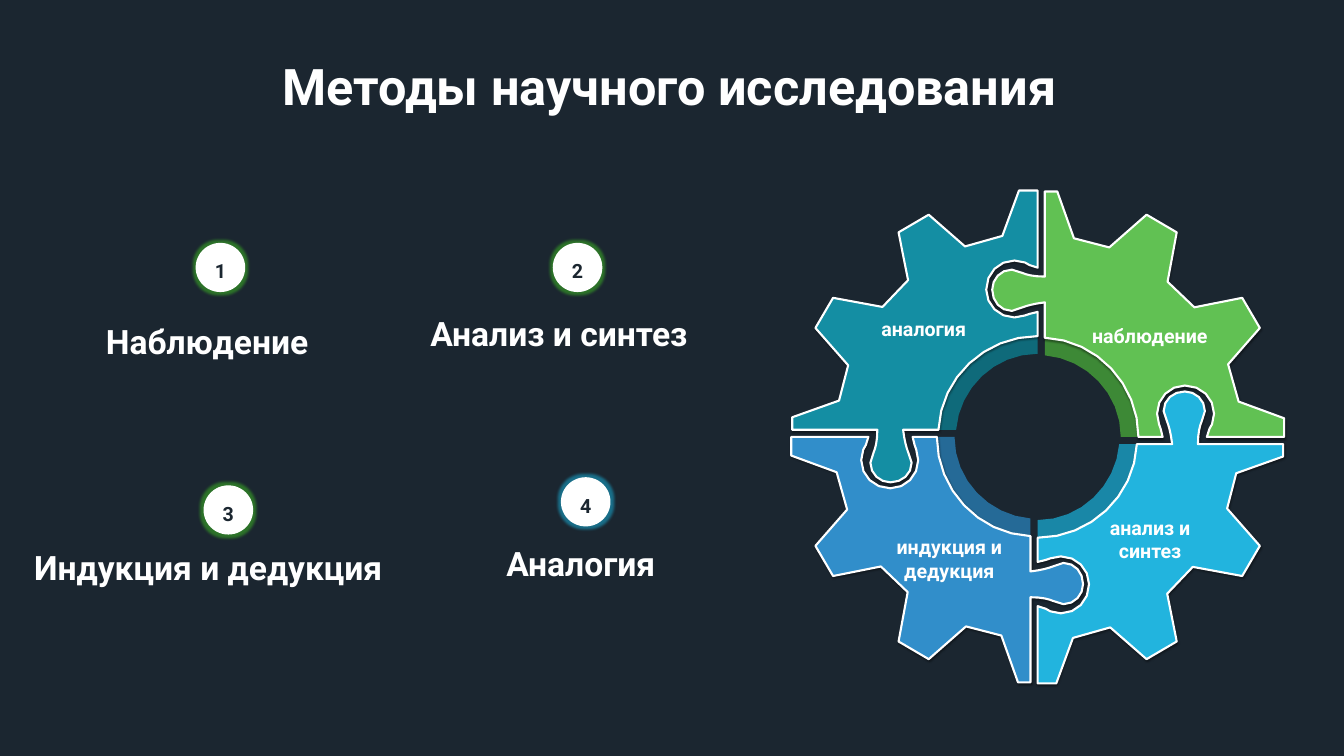
import math

import pptx
import pptx.dml.color
import pptx.enum.shapes
import pptx.enum.text
import pptx.oxml
import pptx.oxml.ns
import pptx.util

Cm, Pt = pptx.util.Cm, pptx.util.Pt
PP = pptx.enum.text.PP_ALIGN
ANCHOR = pptx.enum.text.MSO_ANCHOR
qn = pptx.oxml.ns.qn
NS = pptx.oxml.ns.nsdecls("a")
DARK, WHITE = "1B2630", "FFFFFF"


def paint(fill, tone):
    fill.solid()
    fill.fore_color.rgb = pptx.dml.color.RGBColor.from_string(tone)


def write(shape, text, size, align=PP.CENTER, tone=WHITE, space=None):
    frame = shape.text_frame
    frame.word_wrap = True
    para = frame.paragraphs[0]
    para.text = text
    para.alignment = align
    para.line_spacing = space
    para.font.name = "Roboto"
    para.font.size = Pt(size)
    para.font.bold = True
    paint(para.font.fill, tone)


deck = pptx.Presentation()
deck.slide_width, deck.slide_height = Cm(67.74), Cm(38.1)
slide = deck.slides.add_slide(deck.slide_layouts[5])
shapes = slide.shapes
paint(slide.background.fill, DARK)

title = shapes.title
title.left, title.top, title.width, title.height = Cm(4.32), Cm(2.64), Cm(59.51), Cm(3.07)
title.text_frame.vertical_anchor = ANCHOR.TOP
write(title, "Методы научного исследования ", 72)

# Numbered methods: circle place, glow, caption box
methods = [
    (9.86, 12.24, "338D27", "Наблюдение", 4.47, 15.44, 11.94, PP.CENTER, 1.3),
    (27.86, 12.24, "338D27", "Анализ и синтез", 21.44, 15.65, 14.99, PP.LEFT, None),
    (10.26, 24.46, "338D27", "Индукция и дедукция", 1.47, 27.46, 19.99, PP.LEFT, None),
    (28.27, 24.05, "1987A7", "Аналогия", 25.27, 27.25, 8.99, PP.LEFT, None),
]
for num, (x, y, glow, name, left, top, width, align, space) in enumerate(methods, 1):
    disc = shapes.add_shape(
        pptx.enum.shapes.MSO_SHAPE.OVAL, Cm(x), Cm(y), Cm(2.5), Cm(2.48))
    paint(disc.fill, WHITE)
    disc.line.fill.background()
    disc.shadow.inherit = False
    disc._element.spPr.find(qn("a:effectLst")).append(pptx.oxml.parse_xml(
        f'<a:glow {NS} rad="{Pt(8)}"><a:srgbClr val="{glow}">'
        '<a:alpha val="75000"/></a:srgbClr></a:glow>'))
    disc.text_frame.vertical_anchor = ANCHOR.MIDDLE
    write(disc, str(num), 28, tone=DARK, space=1.3)
    box = shapes.add_textbox(Cm(left), Cm(top), Cm(width), Cm(2.31))
    write(box, name, 48, align, space=space)

# One quarter of the gear, in cm from its centre: pairs are
# straight steps, sixes are Bezier curves
ring = [
    (4.19, 0), (5.18, 0), (5.18, -2.77, 3.07, -5, 0.36, -5.18),
    (0.36, -4.11), (2.46, -3.94, 4.19, -2.18, 4.19, 0),
]
piece = [
    (0.36, -5), (3, -4.88, 5.08, -2.64, 5.08, 0),
    # socket
    (6.3, 0), (6.2, -0.41), (6.12, -0.64), (6.02, -1.17),
    (6.02, -1.96, 6.65, -2.59, 7.42, -2.59),
    (8.26, -2.59, 8.89, -1.96, 8.89, -1.17),
    (8.79, -0.64), (8.66, -0.41), (8.53, 0),
    # teeth
    (12.42, 0), (12.42, -0.94), (10.13, -1.78), (9.6, -3.66),
    (11.2, -5.49), (10.31, -7.01), (7.9, -6.53), (6.55, -7.82),
    (7.01, -10.31), (5.49, -11.2), (3.61, -9.55), (1.83, -10.01),
    (0.99, -12.37), (0.36, -12.37),
    # knob
    (0.36, -8.08), (-0.23, -8.08, -0.58, -8.18, -0.76, -8.26), (-1.3, -8.43),
    (-1.88, -8.43, -2.29, -7.95, -2.29, -7.42),
    (-2.29, -6.83, -1.88, -6.35, -1.3, -6.35),
    (-0.76, -6.53), (-0.58, -6.6, -0.23, -6.71, 0.36, -6.78),
]
quarters = [(3, "0F6A7A", "148EA3"), (0, "439837", "61C153"),
            (1, "1987A7", "22B4DE"), (2, "256A97", "318ECA")]
for turns, shade, tone in quarters:
    for route, color in ((ring, shade), (piece, tone)):
        dots = []
        for step in route:
            if len(step) == 2:
                dots.append(step)
                continue
            ax, ay = dots[-1]
            bx, by, cx, cy, dx, dy = step
            count = 8 if math.dist((ax, ay), (dx, dy)) > 4 else 4
            for i in range(1, count + 1):
                t = i / count
                u = 1 - t
                a, b, c, d = u**3, 3 * u * u * t, 3 * u * t * t, t**3
                dots.append((a * ax + b * bx + c * cx + d * dx,
                             a * ay + b * by + c * cy + d * dy))
        for _ in range(turns):
            dots = [(-y, x) for x, y in dots]
        dots = [(Cm(52.3 + x), Cm(22.02 + y)) for x, y in dots]
        pen = shapes.build_freeform(*dots[0])
        pen.add_line_segments(dots[1:])
        part = pen.convert_to_shape()
        paint(part.fill, color)
        part.shadow.inherit = False
        if route is ring:
            part.line.fill.background()
            if turns == 0:
                part._element.spPr.find(".//" + qn("a:srgbClr")).append(
                    pptx.oxml.parse_xml(f'<a:alpha {NS} val="87000"/>'))
        else:
            paint(part.line.fill, WHITE)
            part.line.width = Pt(3)
            part._element.spPr.find(qn("a:effectLst")).append(pptx.oxml.parse_xml(
                f'<a:outerShdw {NS} blurRad="{Pt(3.1)}" dist="{Pt(1.6)}" dir="5400000">'
                '<a:srgbClr val="000000"><a:alpha val="38000"/></a:srgbClr></a:outerShdw>'))

labels = [
    ("анализ и синтез", 55.07, 25.86, 5.79),
    ("аналогия", 43.66, 15.85, 5.79),
    ("индукция и дедукция", 44.48, 26.85, 6.73),
    ("наблюдение ", 54.28, 16.18, 7.59),
]
for name, left, top, width in labels:
    write(shapes.add_textbox(Cm(left), Cm(top), Cm(width), Cm(2.26)), name, 28)

deck.save("out.pptx")
